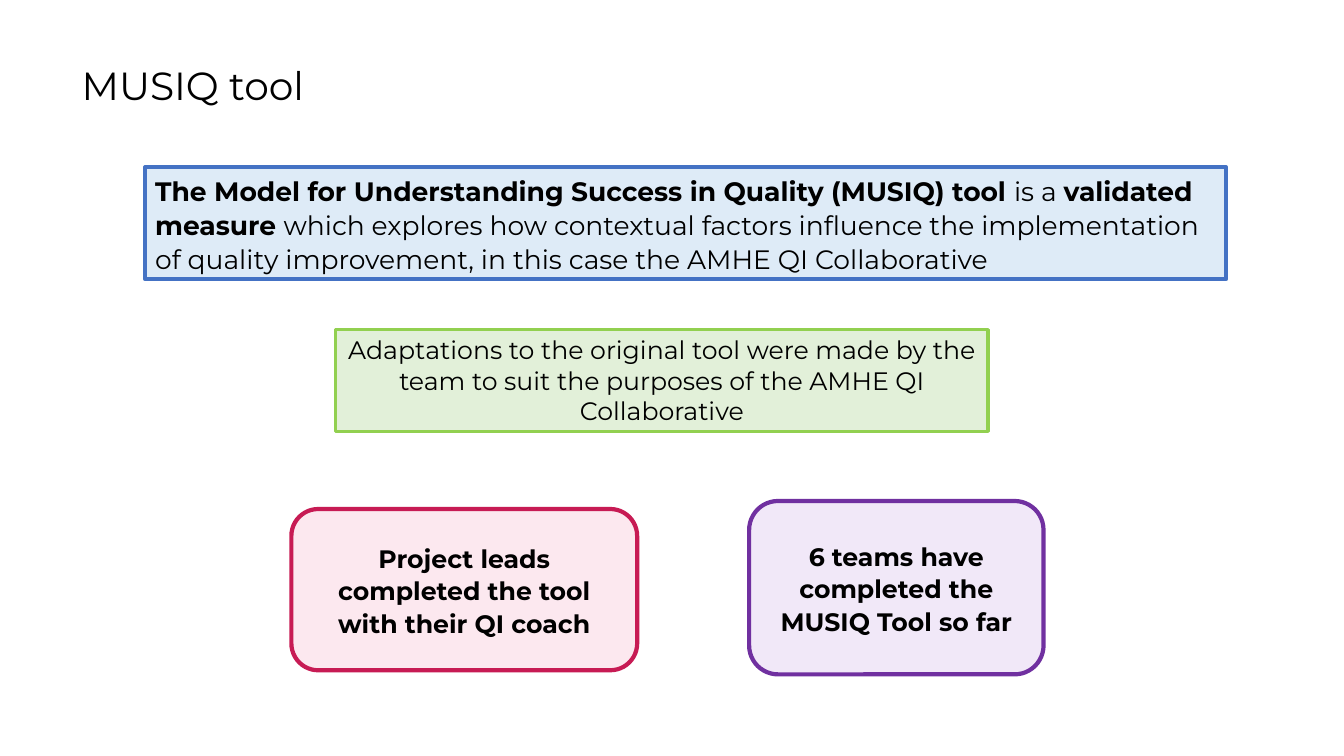
"""Build the slide that introduces the MUSIQ tool."""
import pptx
import pptx.util
import pptx.dml.color
import pptx.enum.shapes
import pptx.enum.text

Inches = pptx.util.Inches
SHAPES = pptx.enum.shapes.MSO_SHAPE
ALIGN = pptx.enum.text.PP_ALIGN
ANCHOR = pptx.enum.text.MSO_ANCHOR


def colour(value):
    return pptx.dml.color.RGBColor.from_string(value)


def write(frame, passages, size, align, anchor, spacing):
    for name, value in {"word_wrap": True, "vertical_anchor": anchor,
                        "auto_size": pptx.enum.text.MSO_AUTO_SIZE.NONE}.items():
        setattr(frame, name, value)
    paragraph = frame.paragraphs[0]
    for name, value in {"alignment": align, "line_spacing": spacing}.items():
        setattr(paragraph, name, value)
    for text, bold in passages:
        run = paragraph.add_run()
        run.text = text
        for name, value in {"name": "Montserrat", "size": pptx.util.Pt(size), "bold": bold}.items():
            setattr(run.font, name, value)
        run.font.color.rgb = colour("000000")


deck = pptx.Presentation()
deck.slide_width, deck.slide_height = Inches(13.33), Inches(7.5)
slide = deck.slides.add_slide(deck.slide_layouts[5])

title = slide.shapes.title
for name, value in {"left": 0.65, "top": 0.24, "width": 12.31, "height": 1.27}.items():
    setattr(title, name, Inches(value))
title.text_frame.margin_left = Inches(0.16)
write(title.text_frame, [("MUSIQ tool", False)], 28, ALIGN.LEFT, ANCHOR.MIDDLE, 0.9)

definition = [
    ("The Model for Understanding Success in Quality (MUSIQ) tool ", True),
    ("is a ", False),
    ("validated measure ", True),
    ("which explores how contextual factors influence the implementation of quality "
     "improvement, in this case the AMHE QI Collaborative", False),
]
adaptations = [("Adaptations to the original tool were made by the team to suit the "
                "purposes of the AMHE QI Collaborative", False)]
completed_teams = [("6 teams have completed the MUSIQ Tool so far", True)]
project_leads = [("Project leads completed the tool with their QI coach", True)]

rounded = SHAPES.ROUNDED_RECTANGLE
panels = [
    (rounded, (7.43, 4.97, 2.92, 1.72), "F1E8F8", "7030A0", 3,
     (completed_teams, 18, ALIGN.CENTER, ANCHOR.MIDDLE, 1.07)),
    (rounded, (2.89, 5.05, 3.43, 1.6), "FCE8EF", "C71B54", 3,
     (project_leads, 18, ALIGN.CENTER, ANCHOR.MIDDLE, 1.07)),
    (SHAPES.RECTANGLE, (1.44, 1.66, 10.72, 1.11), "DEEBF7", "4472C4", 3,
     (definition, 19, ALIGN.LEFT, ANCHOR.TOP, 1.07)),
    (SHAPES.RECTANGLE, (3.33, 3.27, 6.47, 1.01), "E2F0D9", "92D050", 2.25,
     (adaptations, 18, ALIGN.CENTER, ANCHOR.TOP, 1.0)),
]
for outline, place, fill, border, weight, message in panels:
    panel = slide.shapes.add_shape(outline, *map(Inches, place))
    panel.shadow.inherit = False
    panel.fill.solid()
    panel.fill.fore_color.rgb = colour(fill)
    panel.line.color.rgb = colour(border)
    panel.line.width = pptx.util.Pt(weight)
    write(panel.text_frame, *message)

deck.save("out.pptx")
